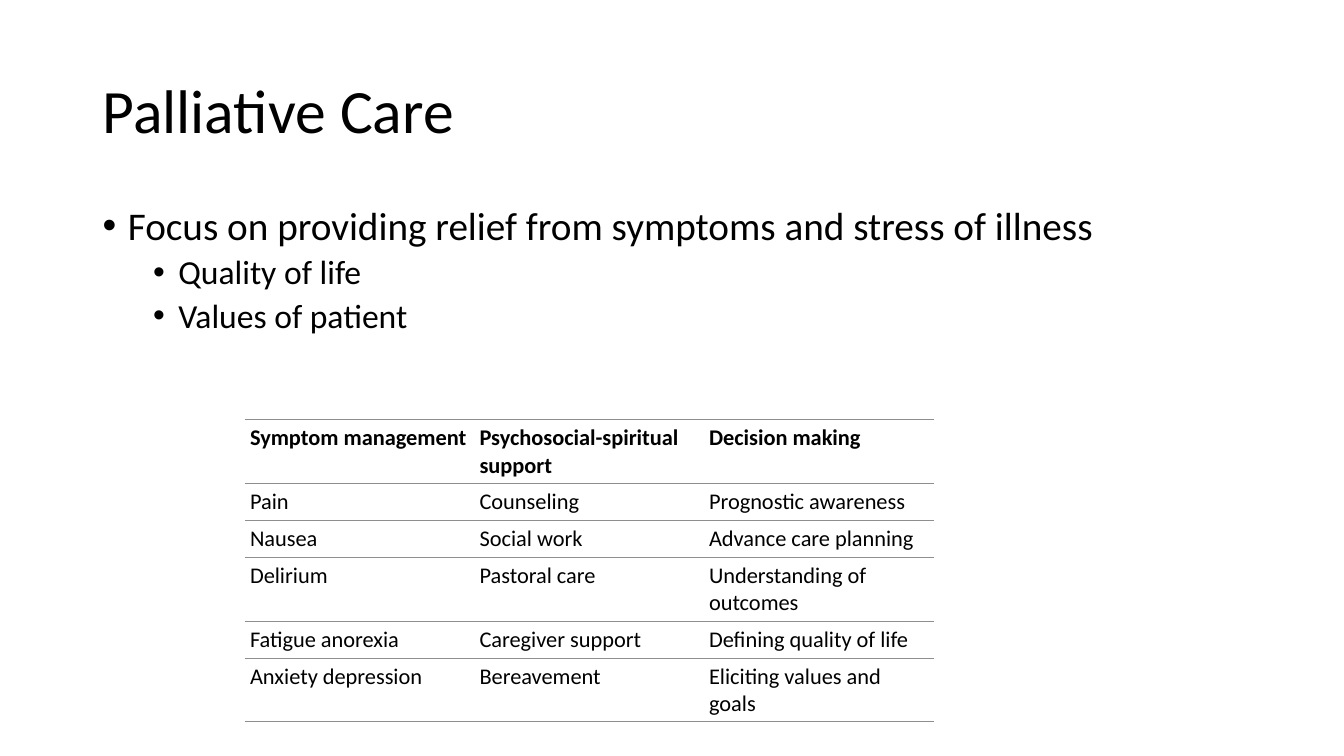
from lxml import etree
from pptx import Presentation
from pptx.dml.color import RGBColor
from pptx.enum.text import MSO_ANCHOR
from pptx.oxml.ns import qn
from pptx.util import Inches, Pt

MIDDLE = MSO_ANCHOR.MIDDLE
TOP = MSO_ANCHOR.TOP
BLACK = RGBColor(0x00, 0x00, 0x00)
GRAY = RGBColor(0x8E, 0x8E, 0x8E)
FONT = "Calibri"

TITLE = "Palliative Care"
BULLETS = [
    (0, "Focus on providing relief from symptoms and stress of illness"),
    (1, "Quality of life"),
    (1, "Values of patient"),
]
CARE_ROWS = [
    ("Symptom management", "Psychosocial-spiritual support", "Decision making"),
    ("Pain", "Counseling", "Prognostic awareness"),
    ("Nausea", "Social work", "Advance care planning"),
    ("Delirium", "Pastoral care", "Understanding of outcomes"),
    ("Fatigue anorexia", "Caregiver support", "Defining quality of life"),
    ("Anxiety depression", "Bereavement", "Eliciting values and goals"),
]


def write_text(para, text, size, bold=False, spacing=None, before=0):
    span = para.add_run()
    span.text = text
    span.font.name = FONT
    span.font.size = Pt(size)
    span.font.bold = bold
    span.font.color.rgb = BLACK
    para.space_before = Pt(before)
    if spacing:
        para.line_spacing = spacing


def add_text_frame(page, left, top, width, height, anchor):
    box = page.shapes.add_textbox(Inches(left), Inches(top), Inches(width), Inches(height))
    frame = box.text_frame
    frame.word_wrap = True
    frame.vertical_anchor = anchor
    return frame


def set_bullet(para, level):
    para.level = level
    properties = para._p.get_or_add_pPr()
    properties.set("marL", str(Inches(0.25 + 0.5 * level)))
    properties.set("indent", str(Inches(-0.25)))
    etree.SubElement(properties, qn("a:buFont"), typeface="Arial")
    etree.SubElement(properties, qn("a:buChar"), char="•")


def add_title(page, left, top, width, height):
    frame = add_text_frame(page, left, top, width, height, MIDDLE)
    write_text(frame.paragraphs[0], TITLE, 44, spacing=0.9)


def add_bullets(page, left, top, width, height):
    frame = add_text_frame(page, left, top, width, height, TOP)
    for index, (level, text) in enumerate(BULLETS):
        para = frame.add_paragraph() if index else frame.paragraphs[0]
        write_text(para, text, 24 if level else 28, spacing=0.9, before=5 if level else 10)
        set_bullet(para, level)


def set_borders(cell):
    properties = cell._tc.get_or_add_tcPr()
    for index, side in enumerate(("lnL", "lnR", "lnT", "lnB")):
        line = etree.Element(qn(f"a:{side}"), w=str(Pt(0.75)))
        if side in ("lnT", "lnB"):
            fill = etree.SubElement(line, qn("a:solidFill"))
            etree.SubElement(fill, qn("a:srgbClr"), val=str(GRAY))
        else:
            etree.SubElement(line, qn("a:noFill"))
        properties.insert(index, line)


def add_care_table(page, left, top, width, row_height):
    row_count, column_count = len(CARE_ROWS), len(CARE_ROWS[0])
    table = page.shapes.add_table(
        row_count, column_count, Inches(left), Inches(top),
        Inches(width), Inches(row_height * row_count),
    ).table
    table.first_row = False
    table.horz_banding = False
    for row_index, texts in enumerate(CARE_ROWS):
        for column_index, text in enumerate(texts):
            cell = table.cell(row_index, column_index)
            cell.margin_left = cell.margin_right = Inches(0.05)
            cell.margin_top = cell.margin_bottom = Inches(0.05)
            cell.fill.background()
            set_borders(cell)
            write_text(cell.text_frame.paragraphs[0], text, 16, bold=row_index == 0)


def main():
    deck = Presentation()
    deck.slide_width = Inches(13.33)
    deck.slide_height = Inches(7.5)
    page = deck.slides.add_slide(deck.slide_layouts[6])
    add_title(page, 0.92, 0.4, 11.5, 1.45)
    add_bullets(page, 0.92, 2, 11.5, 4.76)
    add_care_table(page, 2.43, 4.16, 6.83, 0.3)
    deck.save("out.pptx")


if __name__ == "__main__":
    main()
